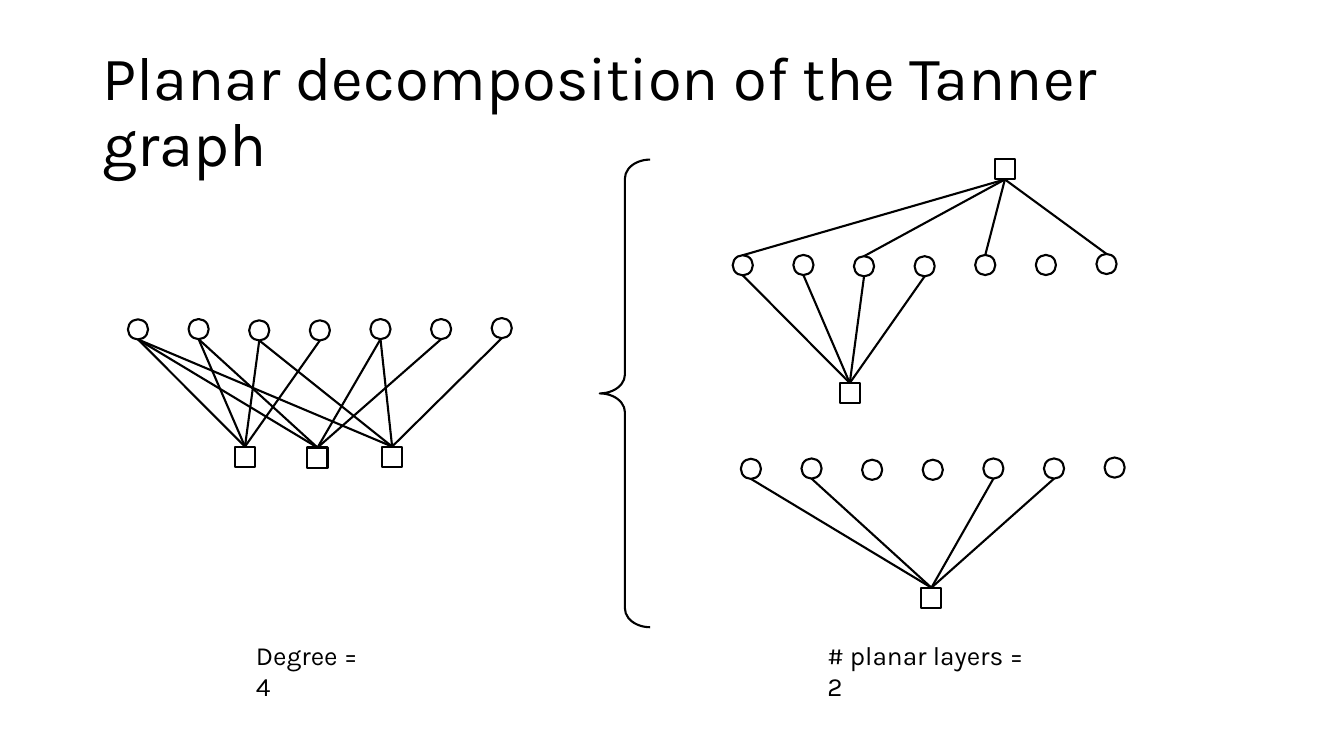
from lxml.etree import SubElement
from pptx import Presentation
from pptx.dml.color import RGBColor
from pptx.enum.shapes import MSO_CONNECTOR, MSO_SHAPE
from pptx.enum.text import MSO_ANCHOR
from pptx.oxml.ns import qn
from pptx.util import Pt

BLACK = RGBColor(0x00, 0x00, 0x00)
WHITE = RGBColor(0xFF, 0xFF, 0xFF)
LINE_FORMAT = {"width": Pt(1.5)}
NODE_SIZE = 14.4
BIT_PITCH = 43.3
BIT_OFFSETS = (0, -0.2, 0.7, 0.7, -0.2, -0.2, -0.9)


def style_line(line):
    line.color.rgb = BLACK
    for name, value in LINE_FORMAT.items():
        setattr(line, name, value)


def add_node(group, preset, x, y):
    shape = group.shapes.add_shape(
        preset, Pt(x - NODE_SIZE / 2), Pt(y - NODE_SIZE / 2), Pt(NODE_SIZE), Pt(NODE_SIZE)
    )
    shape.shadow.inherit = False
    shape.fill.solid()
    shape.fill.fore_color.rgb = WHITE
    style_line(shape.line)


presentation = Presentation()
presentation.slide_width = Pt(960)
presentation.slide_height = Pt(540)
slide = presentation.slides.add_slide(presentation.slide_layouts[6])

graphs = [
    {
        "first_bit": (98.6, 235.3),
        "checks": [
            (280.1, 326.2, (0, 2, 4, 6)),
            (226.8, 326.9, (0, 1, 4, 5)),
            (175, 326.2, (0, 1, 2, 3)),
        ],
    },
    {
        "first_bit": (536.4, 334.9),
        "checks": [(665.3, 427, (0, 1, 4, 5))],
    },
    {
        "first_bit": (530.6, 189.5),
        "checks": [(717.8, 121, (0, 2, 4, 6)), (607, 280.8, (0, 1, 2, 3))],
    },
]

for graph in graphs:
    group = slide.shapes.add_group_shape()
    left, row = graph["first_bit"]
    bits = [(left + index * BIT_PITCH, row + offset) for index, offset in enumerate(BIT_OFFSETS)]
    for x, y in bits:
        add_node(group, MSO_SHAPE.OVAL, x, y)
    for check_x, check_y, neighbours in graph["checks"]:
        add_node(group, MSO_SHAPE.RECTANGLE, check_x, check_y)
        reach = NODE_SIZE / 2 if check_y > row else -NODE_SIZE / 2
        for index in neighbours:
            bit_x, bit_y = bits[index]
            edge = group.shapes.add_connector(
                MSO_CONNECTOR.STRAIGHT,
                Pt(check_x), Pt(check_y - reach), Pt(bit_x), Pt(bit_y + reach),
            )
            style_line(edge.line)
            SubElement(edge._element.spPr, qn("a:effectLst"))

brace = slide.shapes.add_shape(MSO_SHAPE.LEFT_BRACE, Pt(428.4), Pt(114), Pt(36), Pt(334))
brace.adjustments[0] = 0.374
brace.adjustments[1] = 0.5
brace.shadow.inherit = False
brace.fill.background()
style_line(brace.line)

texts = [
    ("Degree = 4", (175.7, 453, 96, 30), 18.7, MSO_ANCHOR.TOP, 1),
    ("# planar layers = 2", (583.9, 453, 160, 30), 18.7, MSO_ANCHOR.TOP, 1),
    ("Planar decomposition of the Tanner graph", (66, 28.8, 828, 104.4), 44, MSO_ANCHOR.MIDDLE, 0.9),
]

for wording, box, size, anchor, spacing in texts:
    shape = slide.shapes.add_textbox(*[Pt(length) for length in box])
    frame = shape.text_frame
    for name, value in {"word_wrap": True, "vertical_anchor": anchor}.items():
        setattr(frame, name, value)
    paragraph = frame.paragraphs[0]
    paragraph.line_spacing = spacing
    run = paragraph.add_run()
    run.text = wording
    for name, value in {"name": "Karla", "size": Pt(size)}.items():
        setattr(run.font, name, value)
    run.font.color.rgb = BLACK

presentation.save("out.pptx")
